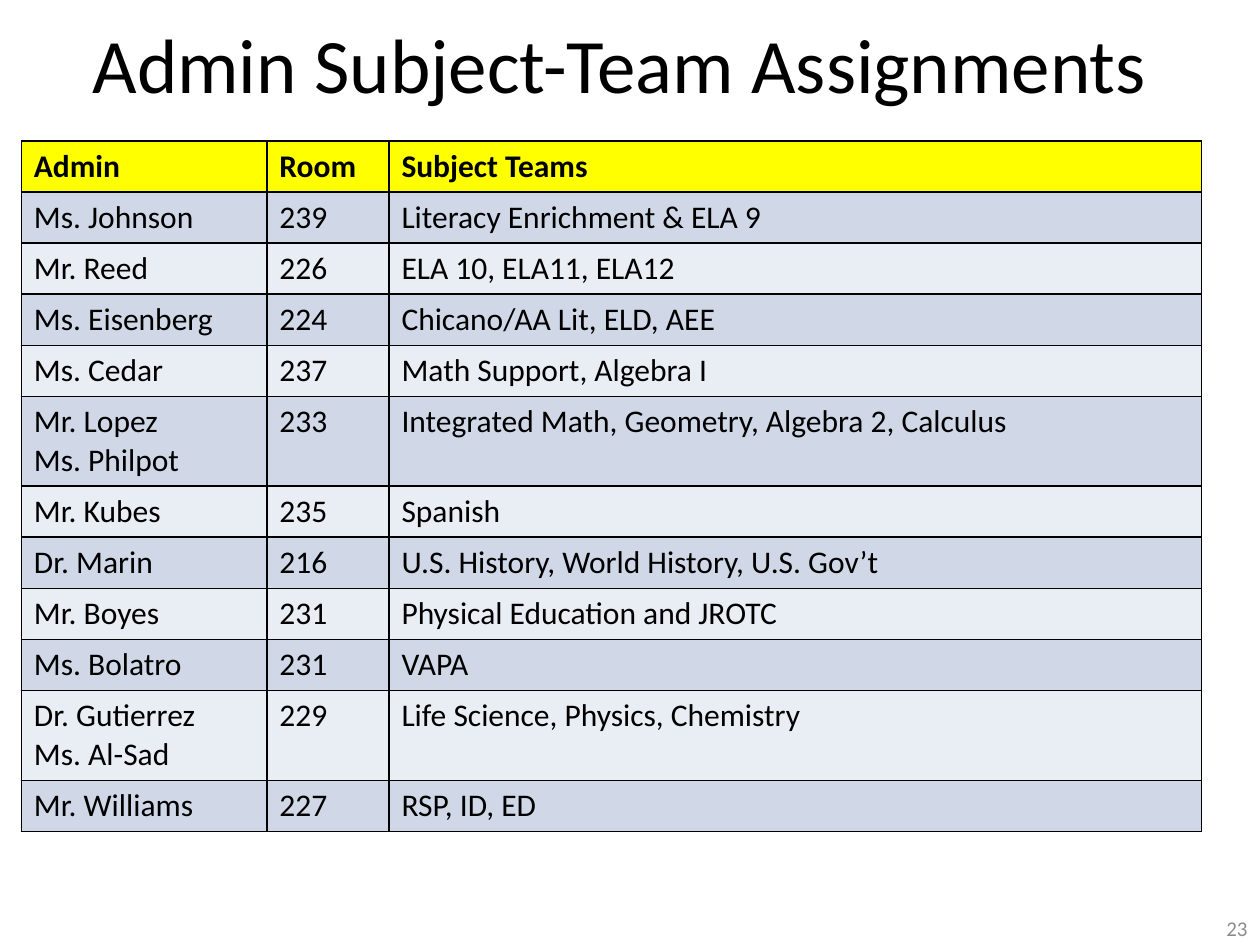
import dataclasses

import lxml.etree
import pptx
import pptx.dml.color
import pptx.enum.text
import pptx.oxml.ns
import pptx.util

Cm = pptx.util.Cm
Pt = pptx.util.Pt
ALIGN = pptx.enum.text.PP_ALIGN
MIDDLE = pptx.enum.text.MSO_ANCHOR.MIDDLE


@dataclasses.dataclass(frozen=True)
class Theme:
    """Colours, font and type sizes of the slide."""
    font: str = "Calibri"
    ink: str = "000000"
    muted: str = "8C8C8C"
    header: str = "FFFF00"
    bands: tuple = ("D0D8E8", "E9EDF4")
    title_size: int = 44
    table_size: int = 18
    number_size: int = 12
    border: float = 1


THEME = Theme()
COLUMN_WIDTHS = (4.95, 2.46, 16.38)
LINE_HEIGHT = 0.78
CELL_PADDING = 0.25
ASSIGNMENTS = (
    ("Admin", "Room", "Subject Teams"),
    ("Ms. Johnson", "239", "Literacy Enrichment & ELA 9"),
    ("Mr. Reed", "226", "ELA 10, ELA11, ELA12"),
    ("Ms. Eisenberg", "224", "Chicano/AA Lit, ELD, AEE"),
    ("Ms. Cedar", "237", "Math Support, Algebra I"),
    ("Mr. Lopez\nMs. Philpot", "233", "Integrated Math, Geometry, Algebra 2, Calculus"),
    ("Mr. Kubes", "235", "Spanish"),
    ("Dr. Marin", "216", "U.S. History, World History, U.S. Gov’t"),
    ("Mr. Boyes", "231", "Physical Education and JROTC"),
    ("Ms. Bolatro", "231", "VAPA"),
    ("Dr. Gutierrez\nMs. Al-Sad", "229", "Life Science, Physics, Chemistry"),
    ("Mr. Williams", "227", "RSP, ID, ED"),
)


def rgb(code):
    """Return the colour for a hex code."""
    return pptx.dml.color.RGBColor.from_string(code)


def write(frame, text, size, color=THEME.ink, bold=False, align=ALIGN.LEFT):
    """Fill a text frame with one formatted paragraph per line of text."""
    frame.text = text
    for paragraph in frame.paragraphs:
        paragraph.alignment = align
        font = paragraph.runs[0].font
        font.name, font.size, font.bold = THEME.font, Pt(size), bold
        font.color.rgb = rgb(color)


def add_text(slide, box, text, **style):
    """Place a wrapped, vertically centred text box."""
    frame = slide.shapes.add_textbox(*map(Cm, box)).text_frame
    frame.word_wrap = True
    frame.vertical_anchor = MIDDLE
    write(frame, text, **style)


def outline(cell):
    """Draw a thin line on all four sides of a cell."""
    properties = cell._tc.get_or_add_tcPr()
    qn = pptx.oxml.ns.qn
    for side in ("a:lnL", "a:lnR", "a:lnT", "a:lnB"):
        line = lxml.etree.SubElement(properties, qn(side), w=str(Pt(THEME.border)))
        fill = lxml.etree.SubElement(line, qn("a:solidFill"))
        lxml.etree.SubElement(fill, qn("a:srgbClr"), val=THEME.ink)


def add_title(slide, box):
    """Place the slide heading."""
    add_text(slide, box, "Admin Subject-Team Assignments",
             size=THEME.title_size, align=ALIGN.CENTER)


def add_assignments(slide, left, top):
    """Place the table of administrators, rooms and subject teams."""
    line_counts = [admin.count("\n") + 1 for admin, _, _ in ASSIGNMENTS]
    heights = [CELL_PADDING + LINE_HEIGHT * count for count in line_counts]
    box = (left, top, sum(COLUMN_WIDTHS), sum(heights))
    table = slide.shapes.add_table(len(ASSIGNMENTS), len(COLUMN_WIDTHS), *map(Cm, box)).table
    for column, width in zip(table.columns, COLUMN_WIDTHS):
        column.width = Cm(width)
    for index, (row, height, entries) in enumerate(zip(table.rows, heights, ASSIGNMENTS)):
        row.height = Cm(height)
        is_header = index == 0
        band = THEME.header if is_header else THEME.bands[(index - 1) % 2]
        for cell, entry in zip(row.cells, entries):
            write(cell.text_frame, entry, size=THEME.table_size, bold=is_header)
            outline(cell)
            cell.fill.solid()
            cell.fill.fore_color.rgb = rgb(band)


def add_page_number(slide, box):
    """Place the page number in the lower right corner."""
    add_text(slide, box, "23", size=THEME.number_size,
             color=THEME.muted, align=ALIGN.RIGHT)


def main():
    """Build and save the slide."""
    presentation = pptx.Presentation()
    presentation.slide_width, presentation.slide_height = Cm(25.4), Cm(19.05)
    slide = presentation.slides.add_slide(presentation.slide_layouts[6])
    add_assignments(slide, 0.43, 2.84)
    add_title(slide, (1.07, 0, 22.86, 2.54))
    add_page_number(slide, (20.12, 18.08, 5.28, 1.27))
    presentation.save("out.pptx")


if __name__ == "__main__":
    main()
